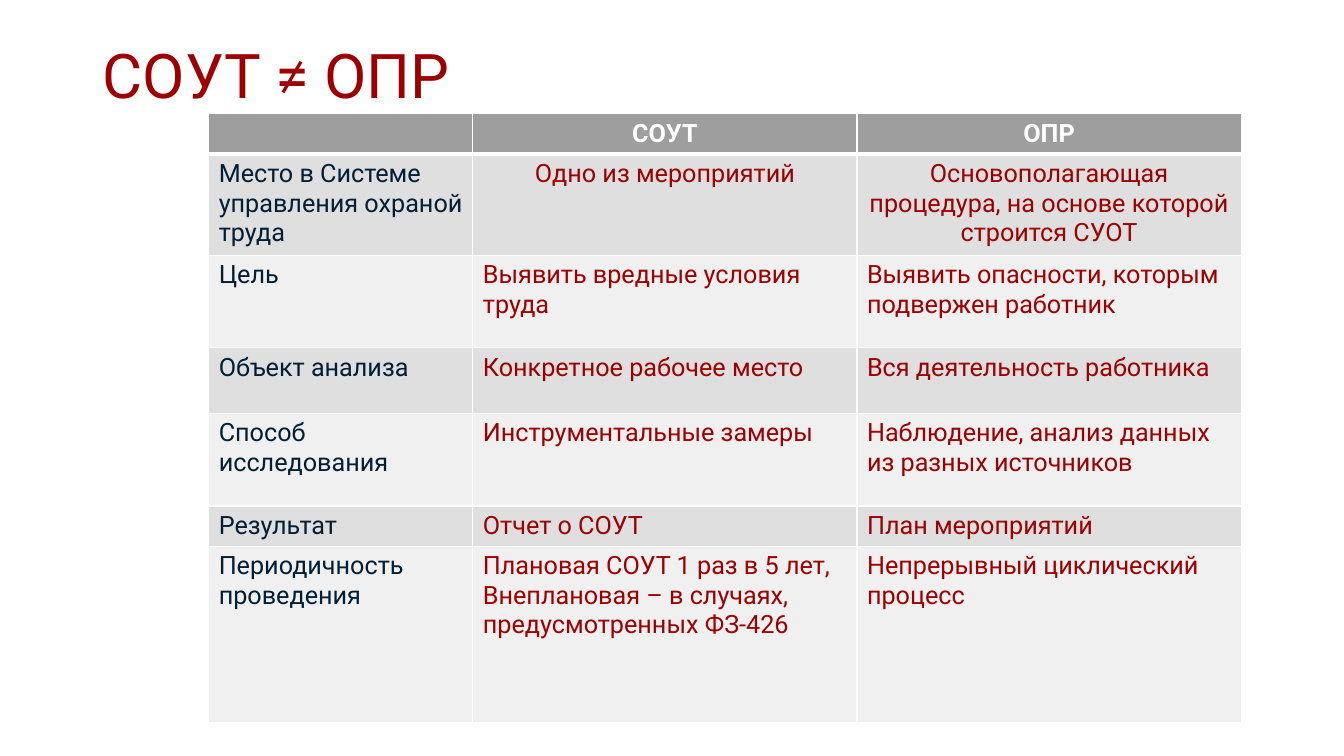
from typing import NamedTuple

from lxml.etree import SubElement
from pptx import Presentation
from pptx.dml.color import RGBColor
from pptx.enum.text import MSO_ANCHOR as Anchor, PP_ALIGN as Align
from pptx.oxml.ns import qn
from pptx.util import Inches, Pt

FONT = "Roboto"
RED = RGBColor(0x9D, 0x00, 0x00)
NAVY = RGBColor(0x00, 0x1F, 0x35)
WHITE = RGBColor(0xFF, 0xFF, 0xFF)
HEAD = RGBColor(0x9E, 0x9E, 0x9E)
DARK = RGBColor(0xDF, 0xDF, 0xDF)
LIGHT = RGBColor(0xF0, 0xF0, 0xF0)


class Row(NamedTuple):
    height: float
    texts: tuple[str, str, str]
    align: Align = Align.LEFT


WIDTHS = (2.62, 3.81, 3.81)
ROWS = (
    Row(0.37, ("", "СОУТ", "ОПР"), Align.CENTER),
    Row(0.37, ("Место в Системе управления охраной труда",
               "Одно из мероприятий",
               "Основополагающая процедура, на основе которой строится СУОТ"),
        Align.CENTER),
    Row(0.92, ("Цель", "Выявить вредные условия труда",
               "Выявить опасности, которым подвержен работник")),
    Row(0.65, ("Объект анализа", "Конкретное рабочее место",
               "Вся деятельность работника")),
    Row(0.92, ("Способ исследования", "Инструментальные замеры",
               "Наблюдение, анализ данных из разных источников")),
    Row(0.37, ("Результат", "Отчет о СОУТ", "План мероприятий")),
    Row(1.75, ("Периодичность проведения",
               "Плановая СОУТ 1 раз в 5 лет,\n"
               "Внеплановая – в случаях, предусмотренных ФЗ-426",
               "Непрерывный циклический процесс")),
)


def style(para, size: float, color: RGBColor, bold: bool = False) -> None:
    formats = {"name": FONT, "size": Pt(size), "bold": bold}
    for name, value in formats.items():
        setattr(para.font, name, value)
    para.font.color.rgb = color


def border(cell, top: float, bottom: float) -> None:
    """Draw white cell edges, with top and bottom widths in points."""
    props = cell._tc.get_or_add_tcPr()
    edges = {"a:lnL": 1, "a:lnR": 1, "a:lnT": top, "a:lnB": bottom}
    for place, (tag, width) in enumerate(edges.items()):
        line = SubElement(props, qn(tag), w=str(Pt(width)))
        fill = SubElement(line, qn("a:solidFill"))
        SubElement(fill, qn("a:srgbClr"), val=str(WHITE))
        props.insert(place, line)


def add_title(slide, text: str) -> None:
    box = slide.shapes.add_textbox(
        Inches(0.92), Inches(0.4), Inches(11.5), Inches(1.45))
    frame = box.text_frame
    frame.word_wrap = True
    frame.vertical_anchor = Anchor.TOP
    frame.text = text
    para = frame.paragraphs[0]
    para.line_spacing = 0.9
    style(para, 44, RED)


def fill_cell(cell, text: str, row: int, col: int, align: Align) -> None:
    head = row == 0
    cell.fill.solid()
    cell.fill.fore_color.rgb = HEAD if head else DARK if row % 2 else LIGHT
    border(cell, 3 if row == 1 else 1, 3 if head else 1)
    cell.text = text
    color = WHITE if head else RED if col else NAVY
    for para in cell.text_frame.paragraphs:
        para.alignment = align if col else Align.LEFT
        style(para, 18, color, head)


def add_grid(slide) -> None:
    height = Inches(6.04)
    frame = slide.shapes.add_table(
        len(ROWS), len(WIDTHS), Inches(2.07), Inches(1.13),
        Inches(sum(WIDTHS)), height)
    table = frame.table
    for col, width in enumerate(WIDTHS):
        table.columns[col].width = Inches(width)
    for index, row in enumerate(ROWS):
        table.rows[index].height = Inches(row.height)
        for col, text in enumerate(row.texts):
            fill_cell(table.cell(index, col), text, index, col, row.align)
    frame.height = height


def main() -> None:
    deck = Presentation()
    deck.slide_width, deck.slide_height = Inches(13.33), Inches(7.5)
    slide = deck.slides.add_slide(deck.slide_layouts[6])
    add_title(slide, "СОУТ ≠ ОПР")
    add_grid(slide)
    deck.save("out.pptx")


if __name__ == "__main__":
    main()
